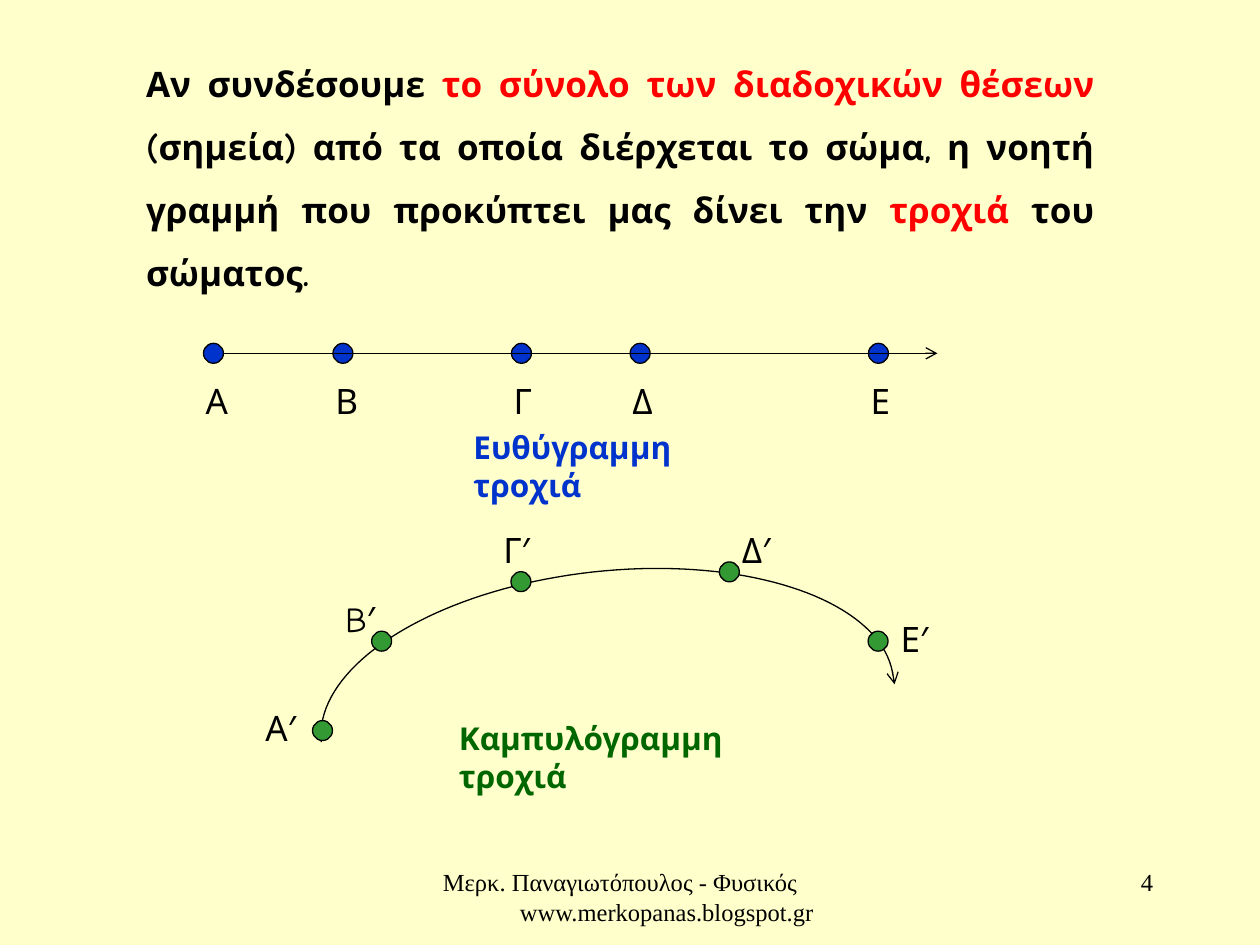
from lxml import etree
from pptx import Presentation
from pptx.dml.color import RGBColor
from pptx.enum.shapes import MSO_CONNECTOR, MSO_SHAPE
from pptx.enum.text import PP_ALIGN
from pptx.oxml.ns import qn
from pptx.util import Pt

LINE = MSO_CONNECTOR.STRAIGHT
OVAL = MSO_SHAPE.OVAL
LEFT, RIGHT, JUSTIFY = PP_ALIGN.LEFT, PP_ALIGN.RIGHT, PP_ALIGN.JUSTIFY
SANS, SERIF = "Comic Neue", "Times New Roman"
BLACK, RED, BLUE = "000000", "FF0000", "0033CC"
GREEN, DARK, CREAM = "339933", "006600", "FFFFCC"
DOT = 11.4


def rgb(code):
    return RGBColor.from_string(code)


def style(run, size, color, bold=False, face=SANS):
    font = run.font
    font.name, font.size, font.bold = face, Pt(size), bold
    font.color.rgb = rgb(color)


def write(shapes, box, lines, size, color=BLACK, bold=False, face=SANS,
          align=LEFT):
    """Add a text box; each line becomes a paragraph."""
    frame = shapes.add_textbox(*map(Pt, box)).text_frame
    frame.word_wrap = True
    frame.text = lines
    for par in frame.paragraphs:
        par.alignment = align
        for run in par.runs:
            style(run, size, color, bold, face)
    return frame


def outline(shape):
    shape.line.color.rgb = rgb(BLACK)
    shape.line.width = Pt(0.75)


def arrow(shape, end):
    """Put an open arrowhead at headEnd (start) or tailEnd (finish)."""
    tip = etree.SubElement(shape.line._get_or_add_ln(), qn("a:" + end))
    tip.set("type", "arrow")


def mark(shapes, x, y, color, name, shift, width):
    """Group a dot at (x, y) with its label, moved by shift."""
    group = shapes.add_group_shape().shapes
    dx, dy = shift
    write(group, (x + dx, y + dy, width, 31), name, 20)
    dot = group.add_shape(OVAL, Pt(x), Pt(y), Pt(DOT), Pt(DOT))
    dot.shadow.inherit = False
    dot.fill.solid()
    dot.fill.fore_color.rgb = rgb(color)
    outline(dot)


def intro(shapes, box):
    parts = [
        ("Αν συνδέσουμε ", BLACK),
        ("το σύνολο των διαδοχικών θέσεων ", RED),
        ("(σημεία) από τα οποία διέρχεται το σώμα, η νοητή γραμμή "
         "που προκύπτει μας δίνει την ", BLACK),
        ("τροχιά ", RED),
        ("του σώματος.", BLACK),
    ]
    par = write(shapes, box, "", 20, align=JUSTIFY).paragraphs[0]
    par.line_spacing = 1.5
    for text, color in parts:
        run = par.add_run()
        run.text = text
        style(run, 20, color, True)


def straight(shapes, left, top):
    first, *rest = [("Α", 0, 28), ("Β", 74, 34), ("Γ", 176, 22.5),
                    ("Δ", 243.8, 28), ("Ε", 380, 28)]

    def point(name, x, width):
        mark(shapes, left + x, top, BLUE, name, (-5.8, 17), width)

    for item in rest:
        point(*item)
    mid = Pt(top + DOT / 2)
    axis = shapes.add_connector(LINE, Pt(left + 5.7), mid,
                                Pt(left + 419.4), mid)
    etree.SubElement(axis._element.spPr, qn("a:effectLst"))
    outline(axis)
    arrow(axis, "tailEnd")
    point(*first)
    write(shapes, (left + 147.2, top + 44.7, 175.7, 29),
          "Ευθύγραμμη τροχιά", 18, BLUE, True)


def bezier(ends, steps=40):
    for i in range(1, steps + 1):
        t = i / steps
        weights = ((1 - t) ** 3, 3 * t * (1 - t) ** 2,
                   3 * t * t * (1 - t), t ** 3)
        yield tuple(sum(w * p[k] for w, p in zip(weights, ends))
                    for k in (0, 1))


def curved(shapes, left, top):
    def place(spot):
        return Pt(left + spot[0]), Pt(top + spot[1])

    tip, knee, crest = (331.2, 67), (330.5, 63.4), (158.4, 2.9)
    falls = [knee, (326.2, 20.2), (249.1, -7.2), crest]
    rises = [crest, (68.4, 13), (-0.7, 56.2), (3.6, 100.1)]
    path = [knee, *bezier(falls), *bezier(rises)]
    pen = shapes.build_freeform(*place(tip))
    pen.add_line_segments([place(spot) for spot in path], close=False)
    curve = pen.convert_to_shape()
    curve.shadow.inherit = False
    curve.fill.background()
    outline(curve)
    arrow(curve, "headEnd")

    write(shapes, (left + 75.1, top + 83.5, 226.8, 29),
          "Καμπυλόγραμμη τροχιά", 18, DARK, True)
    points = [("B′", 32.4, 36.7, (-22.3, -23), 34),
              ("Α′", -1.4, 87.8, (-34, -11.5), 34),
              ("Γ′", 112, 2.7, (-11.5, -28.2), 34),
              ("Δ′", 231.1, -2.9, (5.8, -22.6), 45),
              ("Ε′", 316.1, 36.7, (11.5, -11.5), 34)]
    for name, x, y, shift, width in points:
        mark(shapes, left + x, top + y, GREEN, name, shift, width)


def footer(shapes, top):
    frame = write(shapes, (246, top, 228, 36),
                  "Μερκ. Παναγιωτόπουλος - Φυσικός\nwww.merkopanas.blogspot.gr",
                  14, face=SERIF)
    frame.margin_right = 0
    site = frame.paragraphs[1]._p.get_or_add_pPr()
    site.set("marL", str(Pt(44)))
    site.set("indent", "0")
    write(shapes, (516, top, 150, 36), "4", 14, face=SERIF, align=RIGHT)


def main():
    deck = Presentation()
    deck.slide_width, deck.slide_height = Pt(720), Pt(540)
    slide = deck.slides.add_slide(deck.slide_layouts[6])
    back = slide.background.fill
    back.solid()
    back.fore_color.rgb = rgb(CREAM)
    shapes = slide.shapes
    footer(shapes, 492)
    intro(shapes, (76.4, 20.4, 556, 117))
    straight(shapes, 116.3, 196.2)
    curved(shapes, 180, 324)
    deck.save("out.pptx")


if __name__ == "__main__":
    main()
